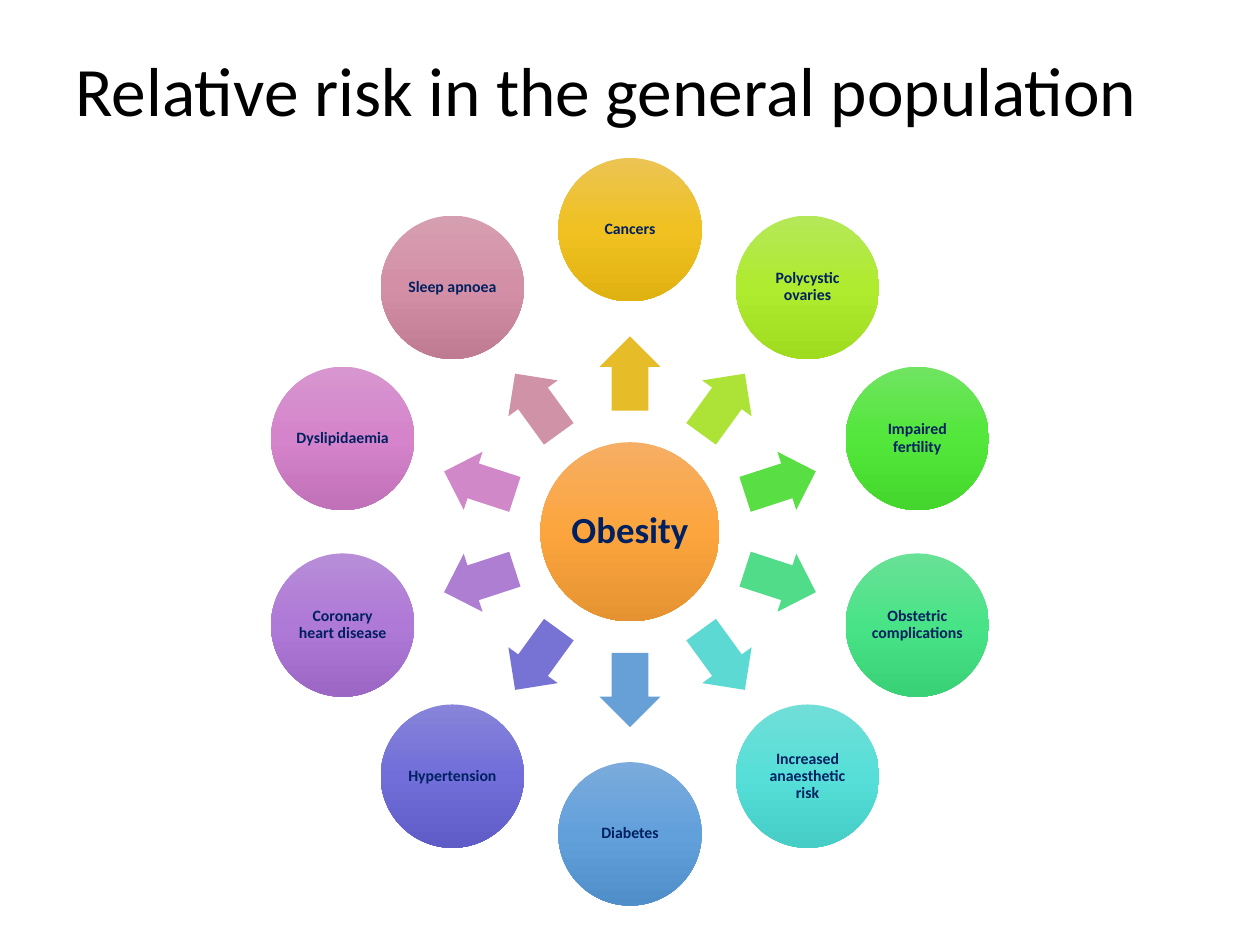
"""Build a slide showing the health risks that radiate from obesity."""
from copy import deepcopy
from dataclasses import dataclass
from math import cos, radians, sin

from pptx import Presentation
from pptx.dml.color import RGBColor
from pptx.enum.shapes import MSO_SHAPE
from pptx.enum.text import MSO_ANCHOR, MSO_AUTO_SIZE, PP_ALIGN
from pptx.oxml.ns import qn
from pptx.util import Cm, Pt

CENTRE_X, CENTRE_Y = 12.7, 10.72
RISK_RADIUS, ARROW_RADIUS = 6.09, 3.19
HUB_SIZE, RISK_SIZE = 3.61, 2.89
ARROW_WIDTH, ARROW_HEIGHT = 1.5, 1.23

HUB_GRADIENT = ("F6AE64", "FCA53E", "E59332")
RISKS = [
    ("Cancers", "E7BC29", ("ECC453", "F0C120", "E0B211")),
    ("Polycystic ovaries", "ACE336", ("B5E859", "AFEB2E", "9FDB1F")),
    ("Impaired fertility", "59DF43", ("70E461", "53E73B", "44D62C")),
    ("Obstetric complications", "50DC88", ("69E196", "49E387", "39D176")),
    ("Increased anaesthetic risk", "5CD9D2", ("72DED8", "55DFD8", "45CDC6")),
    ("Diabetes", "67A0D6", ("7BABDC", "62A0DC", "508ECA")),
    ("Hypertension", "7673D4", ("8784DA", "716ED9", "5F5CC7")),
    ("Coronary heart disease", "AE7ED2", ("B78DD8", "AF79D7", "9C67C4")),
    ("Dyslipidaemia", "D188C8", ("D796CF", "D584CB", "C171B8")),
    ("Sleep apnoea", "D092A7", ("D69FB1", "D38FA6", "BF7B92")),
]


@dataclass(frozen=True)
class Theme:
    font: str = "Calibri"
    title_color: str = "000000"
    label_color: str = "002060"
    title_size: float = 39.6
    hub_size: float = 21
    risk_size: float = 9


def write(frame, text, *, font, size, color, bold=False, align=PP_ALIGN.CENTER, inset=None):
    frame.word_wrap = True
    frame.auto_size = MSO_AUTO_SIZE.NONE
    frame.vertical_anchor = MSO_ANCHOR.MIDDLE
    if inset is not None:
        frame.margin_left = frame.margin_right = Cm(inset)
        frame.margin_top = frame.margin_bottom = Cm(inset)
    paragraph = frame.paragraphs[0]
    paragraph.alignment = align
    paragraph.line_spacing = 0.9
    run = paragraph.add_run()
    run.text = text
    run.font.name = font
    run.font.size = Pt(size)
    run.font.bold = bold
    run.font.color.rgb = RGBColor.from_string(color)


def apply_gradient(shape, colors):
    shape.fill.gradient()
    shape.fill.gradient_angle = 270
    stop_list = shape.element.spPr.find(qn("a:gradFill")).find(qn("a:gsLst"))
    stop_list.insert(1, deepcopy(stop_list[0]))
    for stop, position, color in zip(shape.fill.gradient_stops, (0, 0.5, 1), colors):
        stop.position = position
        stop.color.rgb = RGBColor.from_string(color)


class RadialSlide:
    def __init__(self, slide, theme):
        self.slide = slide
        self.theme = theme

    def title(self, text):
        heading = self.slide.shapes.title
        heading.left, heading.top = Cm(1.27), Cm(0.3)
        heading.width, heading.height = Cm(22.86), Cm(3.18)
        write(heading.text_frame, text, font=self.theme.font, size=self.theme.title_size,
              color=self.theme.title_color, align=PP_ALIGN.LEFT)

    def centred_shape(self, preset, x, y, width, height):
        shape = self.slide.shapes.add_shape(
            preset, Cm(x - width / 2), Cm(y - height / 2), Cm(width), Cm(height))
        shape.shadow.inherit = False
        shape.line.fill.background()
        return shape

    def circle(self, text, x, y, diameter, gradient, size, inset):
        circle = self.centred_shape(MSO_SHAPE.OVAL, x, y, diameter, diameter)
        apply_gradient(circle, gradient)
        write(circle.text_frame, text, font=self.theme.font, size=size,
              color=self.theme.label_color, bold=True, inset=inset)

    def arrow(self, x, y, rotation, color):
        arrow = self.centred_shape(MSO_SHAPE.RIGHT_ARROW, x, y, ARROW_WIDTH, ARROW_HEIGHT)
        arrow.adjustments[0] = 0.6
        arrow.adjustments[1] = 0.5
        arrow.rotation = rotation
        arrow.fill.solid()
        arrow.fill.fore_color.rgb = RGBColor.from_string(color)


def around_hub(radius, angle):
    return (CENTRE_X + radius * cos(radians(angle)),
            CENTRE_Y + radius * sin(radians(angle)))


def main():
    deck = Presentation()
    deck.slide_width, deck.slide_height = Cm(25.4), Cm(19.05)
    theme = Theme()
    page = RadialSlide(deck.slides.add_slide(deck.slide_layouts[5]), theme)
    page.title("Relative risk in the general population")
    page.circle("Obesity", CENTRE_X, CENTRE_Y, HUB_SIZE, HUB_GRADIENT, theme.hub_size, 0.08)
    for index, (risk, arrow_color, gradient) in enumerate(RISKS):
        angle = (270 + index * 360 / len(RISKS)) % 360
        page.arrow(*around_hub(ARROW_RADIUS, angle), angle, arrow_color)
        page.circle(risk, *around_hub(RISK_RADIUS, angle), RISK_SIZE, gradient,
                    theme.risk_size, 0.03)
    deck.save("out.pptx")


if __name__ == "__main__":
    main()
